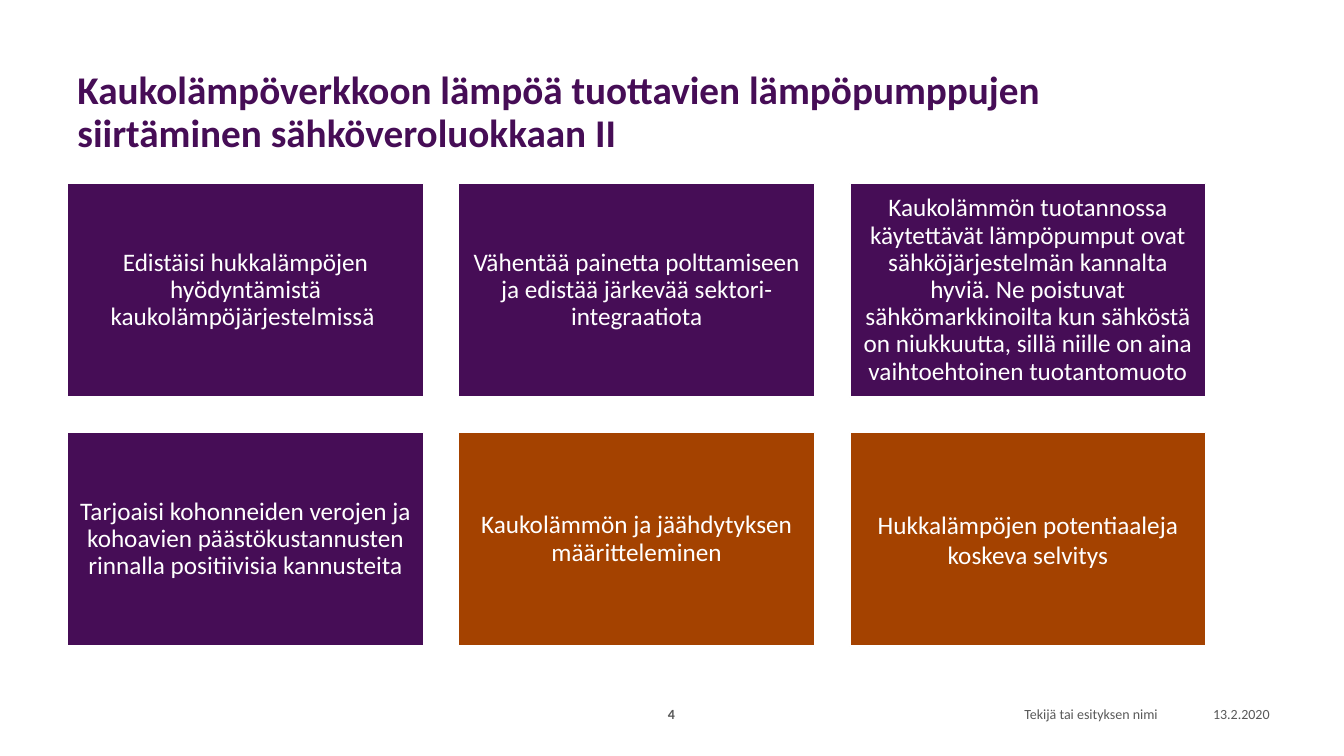
from dataclasses import dataclass

from pptx import Presentation
from pptx.dml.color import RGBColor as Rgb
from pptx.enum.shapes import MSO_SHAPE as Shape
from pptx.enum.text import MSO_ANCHOR as Anchor, PP_ALIGN as Align
from pptx.util import Inches, Pt


@dataclass(frozen=True)
class Theme:
    """Colours and type sizes of the slide."""
    plum: Rgb = Rgb.from_string("460D56")
    rust: Rgb = Rgb.from_string("A44200")
    white: Rgb = Rgb.from_string("FFFFFF")
    grey: Rgb = Rgb.from_string("595959")
    face: str = "Calibri"
    head: Pt = Pt(28)
    body: Pt = Pt(18)
    small: Pt = Pt(10)


THEME = Theme()
TITLE = "Kaukolämpöverkkoon lämpöä tuottavien lämpöpumppujen siirtäminen sähköveroluokkaan II"
CARDS = [
    ("Edistäisi hukkalämpöjen hyödyntämistä kaukolämpöjärjestelmissä ", THEME.plum, 0.9),
    ("Vähentää painetta polttamiseen ja edistää järkevää sektori-integraatiota", THEME.plum, 0.9),
    ("Kaukolämmön tuotannossa käytettävät lämpöpumput ovat sähköjärjestelmän "
     "kannalta hyviä. Ne poistuvat sähkömarkkinoilta kun sähköstä on niukkuutta, "
     "sillä niille on aina vaihtoehtoinen tuotantomuoto", THEME.plum, 0.9),
    ("Tarjoaisi kohonneiden verojen ja kohoavien päästökustannusten rinnalla "
     "positiivisia kannusteita", THEME.plum, 0.9),
    ("Kaukolämmön ja jäähdytyksen määritteleminen", THEME.rust, 0.9),
    ("Hukkalämpöjen potentiaaleja koskeva selvitys", THEME.rust, 1.0),
]
FOOT = [
    ("4", 5.69, 0.6, Align.CENTER, True),
    ("Tekijä tai esityksen nimi", 6.74, 4.17, Align.RIGHT, False),
    ("13.2.2020", 10.91, 1.11, Align.RIGHT, False),
]


def write(shape, text, size, color, align=Align.LEFT, bold=False, lead=1.0):
    """Put one styled paragraph, centred in height, into a shape."""
    frame = shape.text_frame
    frame.word_wrap = True
    frame.vertical_anchor = Anchor.MIDDLE
    para = frame.paragraphs[0]
    para.text, para.alignment, para.line_spacing = text, align, lead
    font = para.runs[0].font
    for key, value in dict(name=THEME.face, size=size, bold=bold).items():
        setattr(font, key, value)
    font.color.rgb = color


def add_title(slide, left, top, width, height):
    """Draw the heading in its box."""
    box = slide.shapes.add_textbox(*map(Inches, (left, top, width, height)))
    write(box, TITLE, THEME.head, THEME.plum, bold=True, lead=0.9)


def add_cards(slide, left, top, width, height, cols=3, gap=0.35):
    """Fill the box with a grid of equal cards."""
    rows = len(CARDS) // cols
    wide = (width - gap * (cols - 1)) / cols
    high = (height - gap * (rows - 1)) / rows
    for i, (text, fill, lead) in enumerate(CARDS):
        row, col = divmod(i, cols)
        place = (left + col * (wide + gap), top + row * (high + gap), wide, high)
        card = slide.shapes.add_shape(Shape.RECTANGLE, *map(Inches, place))
        card.shadow.inherit = False
        card.fill.solid()
        card.fill.fore_color.rgb = fill
        card.line.color.rgb = THEME.white
        card.line.width = Pt(1)
        for side in ("left", "top", "right", "bottom"):
            setattr(card.text_frame, f"margin_{side}", Inches(0.07))
        write(card, text, THEME.body, THEME.white, Align.CENTER, lead=lead)


def add_foot(slide, left, top, height):
    """Draw page number, author and date along the foot."""
    for text, shift, width, align, bold in FOOT:
        place = (left + shift, top, width, height)
        box = slide.shapes.add_textbox(*map(Inches, place))
        write(box, text, THEME.small, THEME.grey, align, bold)


def main():
    """Build and save the slide."""
    deck = Presentation()
    deck.slide_width, deck.slide_height = Inches(13.33), Inches(7.5)
    slide = deck.slides.add_slide(deck.slide_layouts[6])
    add_title(slide, 0.67, 0.4, 10.37, 1.45)
    add_cards(slide, 0.67, 1.82, 11.29, 4.59)
    add_foot(slide, 0.67, 6.95, 0.27)
    deck.save("out.pptx")


if __name__ == "__main__":
    main()
